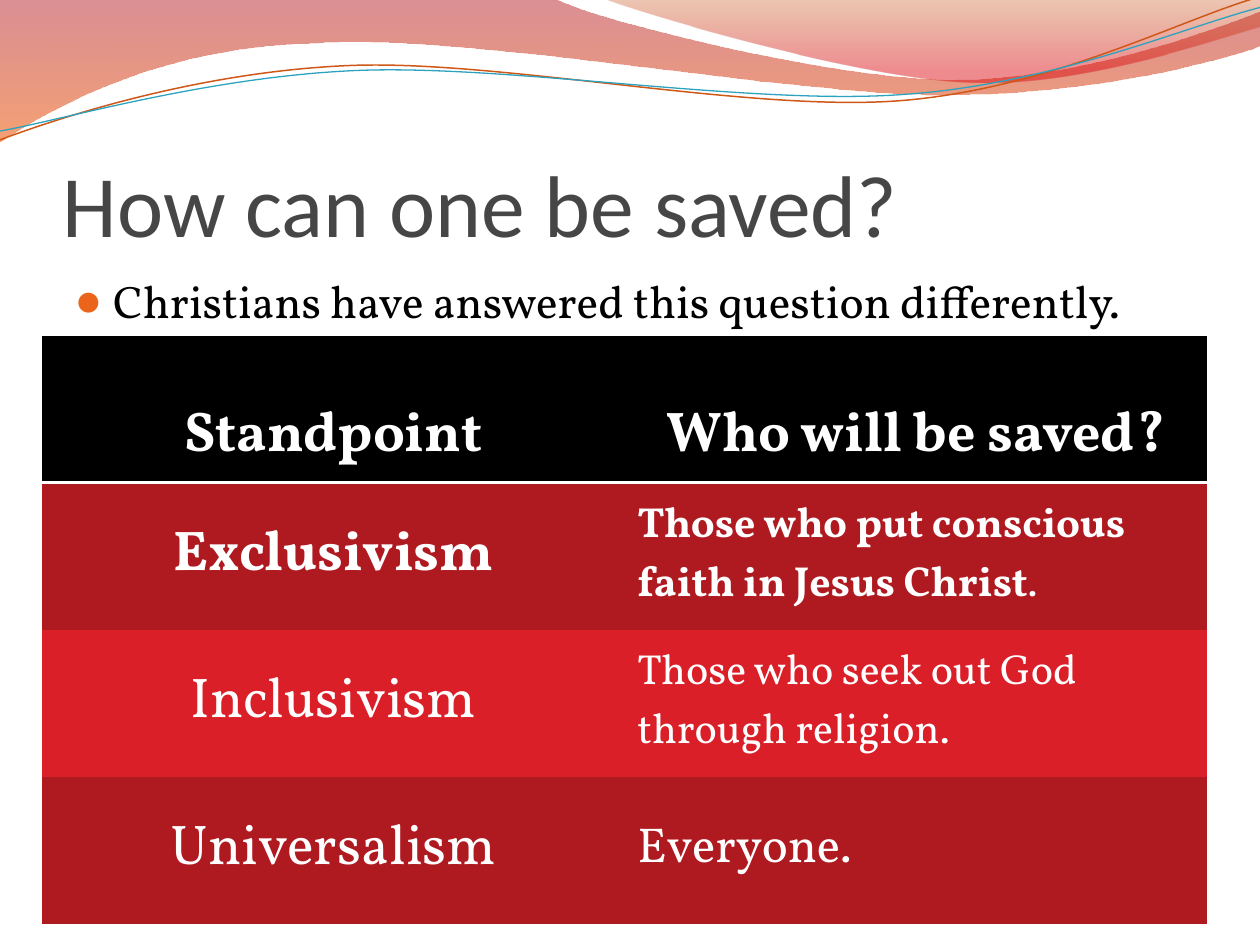
import math

from lxml import etree
from pptx import Presentation
from pptx.dml.color import RGBColor
from pptx.enum.text import MSO_ANCHOR, PP_ALIGN
from pptx.oxml import parse_xml
from pptx.oxml.ns import nsdecls, qn
from pptx.util import Cm, Pt

LEFT, CENTER = PP_ALIGN.LEFT, PP_ALIGN.CENTER
TOP, MIDDLE, BOTTOM = MSO_ANCHOR.TOP, MSO_ANCHOR.MIDDLE, MSO_ANCHOR.BOTTOM

WHITE = RGBColor(0xFF, 0xFF, 0xFF)
BLACK = RGBColor(0x00, 0x00, 0x00)
GRAY = RGBColor(0x46, 0x46, 0x46)
DARK_RED = RGBColor(0xAF, 0x19, 0x20)
RED = RGBColor(0xDA, 0x1F, 0x28)
ORANGE = RGBColor(0xEB, 0x64, 0x1B)
RUST = RGBColor(0xCF, 0x58, 0x18)
TEAL = RGBColor(0x2D, 0xA2, 0xBF)
CRIMSON = RGBColor(0xAF, 0x09, 0x11)
FLAME = RGBColor(0xEE, 0x53, 0x00)
BROWN = RGBColor(0xC2, 0x44, 0x00)
SCARLET = RGBColor(0xDC, 0x00, 0x0B)

HEADING_FONT, BODY_FONT = "Calibri", "Vollkorn"
NO_GRID_STYLE = "{2D5ABB26-0587-4C30-8999-92F81FD0307C}"

# Content
TITLE = "How can one be saved?"
BULLET = "Christians have answered this question differently."
HEADERS = ["Standpoint", "Who will be saved?"]
# standpoint, answer as (text, bold) runs, bold standpoint, answer size
STANDPOINTS = [
    ("Exclusivism", [("Those who put conscious faith in Jesus Christ", True), (".", False)], True, 24),
    ("Inclusivism", [("Those who seek out God through religion.", False)], False, 24),
    ("Universalism", [("Everyone.", False)], False, 28),
]

# Wave outlines in inches: two numbers are a corner, six are a Bezier curve.
# Gradient stops: position %, colour, opacity %
WAVES = [
    ([(0, 0), (4.4, -0.01), (4.76, 0.17, 6.64, 0.63, 7.58, 0.63),
      (8.53, 0.63, 9.58, 0.26, 10, 0.09), (10.01, 0.36),
      (9.83, 0.44, 8.7, 0.76, 7.46, 0.75), (6.22, 0.75, 3.82, 0.28, 2.57, 0.34),
      (1.29, 0.36, 0.46, 0.83, -0.01, 1.13)],
     [(0, CRIMSON, 45), (100, FLAME, 55)]),
    ([(4.79, -0.01), (5.09, 0.11, 6.82, 0.62, 7.69, 0.65),
      (8.56, 0.69, 9.61, 0.32, 10, 0.21), (10, 0)],
     [(0, BROWN, 30), (80, SCARLET, 45)]),
]
# outline, centre of the tilted box, colour, width in points
STRANDS = [
    ([(0, 1.11), (0.48, 0.93, 1.58, 0.57, 2.77, 0.52),
      (3.95, 0.47, 5.93, 0.89, 7.13, 0.8), (8.33, 0.71, 9.38, 0.15, 9.98, -0.02)],
     (4.99, 0.57), RUST, 0.85),
    ([(0, 1.04), (0.47, 0.96, 1.64, 0.61, 2.83, 0.56),
      (4.03, 0.51, 5.97, 0.84, 7.17, 0.75), (8.36, 0.67, 9.41, 0.21, 10, 0.06)],
     (5, 0.59), TEAL, 0.75),
]
TILT = -2.7


def inches(value):
    return Cm(value * 2.54)


def rotate(outline, center, degrees):
    cosine, sine = math.cos(math.radians(degrees)), math.sin(math.radians(degrees))
    cx, cy = center
    return [[value for x, y in zip(segment[::2], segment[1::2])
             for value in (cx + (x - cx) * cosine - (y - cy) * sine,
                           cy + (x - cx) * sine + (y - cy) * cosine)]
            for segment in outline]


def add_outline(slide, outline, close):
    points = [(inches(x), inches(y)) for segment in outline
              for x, y in zip(segment[::2], segment[1::2])]
    builder = slide.shapes.build_freeform(*points[0])
    builder.add_line_segments(points[1:], close=close)
    shape = builder.convert_to_shape()
    shape.shadow.inherit = False
    # Join each run of three control points into one curve
    lines = iter(list(shape.element.iter(qn("a:lnTo"))))
    for segment in outline[1:]:
        line = next(lines)
        if len(segment) == 6:
            line.addprevious(curve := etree.Element(qn("a:cubicBezTo")))
            for part in (line, next(lines), next(lines)):
                curve.append(part[0])
                part.getparent().remove(part)
    return shape


def fill_gradient(shape, stops):
    """Fill from top to bottom with translucent colours."""
    shape.fill.gradient()
    gradient = shape.element.spPr.find(qn("a:gradFill"))
    stop_xml = "".join(
        f'<a:gs pos="{position * 1000}"><a:srgbClr val="{color}">'
        f'<a:alpha val="{opacity * 1000}"/></a:srgbClr></a:gs>'
        for position, color, opacity in stops)
    gradient.getparent().replace(gradient, parse_xml(
        f'<a:gradFill {nsdecls("a")} rotWithShape="1"><a:gsLst>{stop_xml}</a:gsLst>'
        '<a:lin ang="5400000" scaled="0"/></a:gradFill>'))


def write(text_frame, runs, *, size, color, font=BODY_FONT, bold=False, align=LEFT):
    """Write a string, or a list of (text, bold) runs, in the first paragraph."""
    paragraph = text_frame.paragraphs[0]
    paragraph.alignment = align
    for text, run_bold in [(runs, bold)] if isinstance(runs, str) else runs:
        run = paragraph.add_run()
        run.text = text
        run.font.size = Pt(size)
        run.font.name = font
        run.font.bold = run_bold
        run.font.color.rgb = color
    return paragraph


def add_text_box(slide, box, anchor):
    text_frame = slide.shapes.add_textbox(*map(inches, box)).text_frame
    text_frame.word_wrap = True
    text_frame.vertical_anchor = anchor
    return text_frame


def add_bullet(paragraph, color):
    properties = paragraph._p.get_or_add_pPr()
    properties.set("marL", str(inches(0.3)))
    properties.set("indent", str(-inches(0.3)))
    bullet_color = etree.SubElement(properties, qn("a:buClr"))
    etree.SubElement(bullet_color, qn("a:srgbClr"), val=str(color))
    etree.SubElement(properties, qn("a:buSzPct"), val="95000")
    etree.SubElement(properties, qn("a:buFont"), typeface=HEADING_FONT)
    etree.SubElement(properties, qn("a:buChar"), char="●")


def fill_cell(cell, runs, fill, anchor, **text_format):
    cell.fill.solid()
    cell.fill.fore_color.rgb = fill
    cell.vertical_anchor = anchor
    write(cell.text_frame, runs, color=WHITE, **text_format)


def add_bottom_border(cell, color, width):
    cell._tc.get_or_add_tcPr().insert(0, parse_xml(
        f'<a:lnB {nsdecls("a")} w="{Pt(width)}"><a:solidFill>'
        f'<a:srgbClr val="{color}"/></a:solidFill></a:lnB>'))


def main():
    presentation = Presentation()
    presentation.slide_width, presentation.slide_height = inches(10), inches(7.5)
    slide = presentation.slides.add_slide(presentation.slide_layouts[6])

    # Waves and strands along the top
    for outline, stops in WAVES:
        wave = add_outline(slide, outline, close=True)
        fill_gradient(wave, stops)
        wave.line.fill.background()
    for outline, center, color, width in STRANDS:
        strand = add_outline(slide, rotate(outline, center, -TILT), close=False)
        strand.rotation = TILT
        strand.fill.background()
        strand.line.color.rgb = color
        strand.line.width = Pt(width)

    # Title and bullet
    title_frame = add_text_box(slide, (0.5, 0.77, 9, 1.25), BOTTOM)
    title_frame.margin_left = title_frame.margin_right = title_frame.margin_bottom = 0
    write(title_frame, TITLE, size=50, color=GRAY, font=HEADING_FONT)
    body_frame = add_text_box(slide, (0.5, 2.12, 9, 4.8), TOP)
    paragraph = write(body_frame, BULLET, size=26, color=BLACK)
    paragraph.space_before = Pt(5.2)
    add_bullet(paragraph, ORANGE)

    # Table of standpoints
    table_box = Cm(0.85), Cm(6.77), Cm(23.49), Cm(11.85)
    table = slide.shapes.add_table(len(STANDPOINTS) + 1, len(HEADERS), *table_box).table
    table._tbl.tblPr.find(qn("a:tableStyleId")).text = NO_GRID_STYLE
    for column, header in enumerate(HEADERS):
        cell = table.cell(0, column)
        fill_cell(cell, header, BLACK, BOTTOM, size=32, bold=True, align=CENTER)
        add_bottom_border(cell, WHITE, 2)
    for row, (standpoint, answer, bold, size) in enumerate(STANDPOINTS, start=1):
        fill = DARK_RED if row % 2 else RED
        fill_cell(table.cell(row, 0), standpoint, fill, MIDDLE, size=32, bold=bold, align=CENTER)
        fill_cell(table.cell(row, 1), answer, fill, MIDDLE, size=size)

    presentation.save("out.pptx")


if __name__ == "__main__":
    main()
